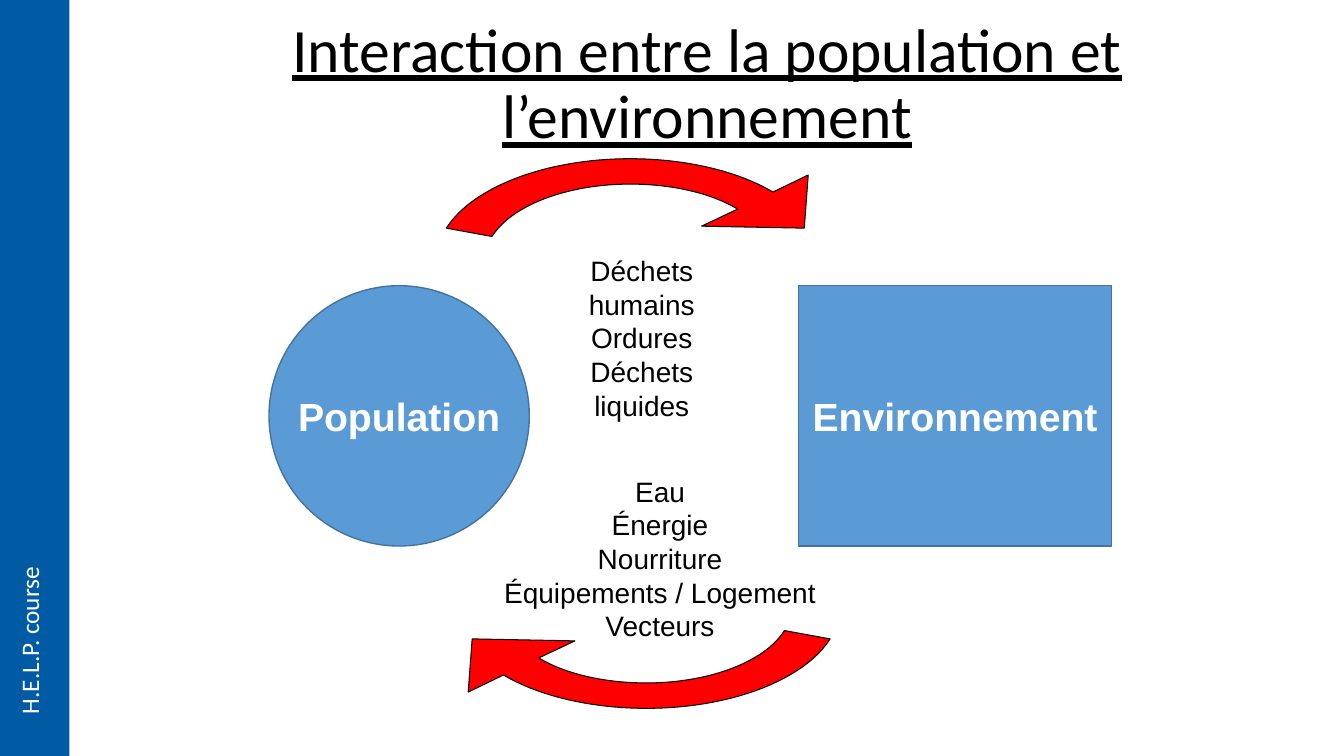
from lxml import etree
from pptx import Presentation, util as u
from pptx.dml.color import RGBColor
from pptx.enum import shapes as sh, text as tx
from pptx.oxml import ns

Cm, Pt = u.Cm, u.Pt
WIDE, HIGH = 33.87, 19.05
INK = {"bar": "005BA4", "node": "5B9BD5", "edge": "43739E",
       "arrow": "FF0000", "black": "000000", "white": "FFFFFF"}
# Arrow outline in cm within its box: one point is a line, three are a curve
START = (7.59, 1.27)
STEPS = [
    [(6.91, 0.86), (5.92, 0.64), (4.88, 0.64)],
    [(3.3, 0.64), (1.9, 1.17), (1.4, 1.96)],
    [(0.25, 1.75)],
    [(0.91, 0.71), (2.77, 0), (4.88, 0)],
    [(6.25, 0), (7.57, 0.3), (8.48, 0.84)],
    [(9.37, 0.41)], [(9.27, 1.75)], [(6.68, 1.7)], [START],
]


def tone(key):
    return RGBColor.from_string(INK[key])


def write(shape, lines, size=20, font="Arial", ink="black", bold=False,
          under=False, align="CENTER", anchor="TOP", wrap=True, space=1.0,
          side=0.25):
    frame = shape.text_frame
    frame.word_wrap = wrap
    frame.auto_size = tx.MSO_AUTO_SIZE.NONE
    frame.vertical_anchor = tx.MSO_ANCHOR[anchor]
    frame.margin_left = frame.margin_right = Cm(side)
    frame.margin_top = frame.margin_bottom = Cm(0.13)
    for i, line in enumerate(lines):
        para = frame.paragraphs[0] if i == 0 else frame.add_paragraph()
        para.alignment = tx.PP_ALIGN[align]
        para.line_spacing = space
        run = para.add_run()
        run.text = line
        run.font.size, run.font.name = Pt(size), font
        run.font.bold, run.font.underline = bold, under
        run.font.color.rgb = tone(ink)


def paint(shape, fill, edge=None, width=1):
    shape.shadow.inherit = False
    shape.fill.solid()
    shape.fill.fore_color.rgb = tone(fill)
    if edge:
        shape.line.color.rgb = tone(edge)
        shape.line.width = Pt(width)
    else:
        shape.line.fill.background()


def side_bar(slide, box):
    x, y, w, h = box
    bar = slide.shapes.add_shape(sh.MSO_SHAPE.RECTANGLE, *map(Cm, box))
    paint(bar, "bar")
    label = slide.shapes.add_textbox(
        Cm(x + 0.1), Cm(y + h - 4.93), Cm(w - 0.48), Cm(4.01))
    write(label, ["H.E.L.P. course"], size=18, font="Calibri", ink="white",
          align="LEFT", wrap=False)
    label.text_frame._txBody.bodyPr.set("vert", "vert270")


def heading(slide, box):
    title = slide.shapes.title
    title.left, title.top, title.width, title.height = map(Cm, box)
    write(title, ["Interaction entre la population et l’environnement"],
          size=44, font="Calibri", under=True, anchor="MIDDLE", space=0.9,
          side=0.4)


def node(slide, box, kind, name):
    shape = slide.shapes.add_shape(kind, *map(Cm, box))
    paint(shape, "node", "edge")
    write(shape, [name], size=28, ink="white", bold=True, anchor="MIDDLE",
          wrap=False)


def flow(slide, box, lines):
    write(slide.shapes.add_textbox(*map(Cm, box)), lines)


def arrow(slide, box, turned=False):
    x, y, w, h = map(Cm, box)
    form = slide.shapes.build_freeform(x, y)
    form.add_line_segments([(x + w, y), (x + w, y + h), (x, y + h)])
    shape = form.convert_to_shape()
    paint(shape, "arrow", "black", 0.75)
    # Trace the curved outline inside the frame
    trace = shape._element.xpath(".//a:path")[0]
    for part in list(trace):
        trace.remove(part)

    def draw(tag, dots=()):
        part = etree.SubElement(trace, ns.qn(tag))
        for a, b in dots:
            a, b = Cm(a), Cm(b)
            if turned:
                a, b = w - a, h - b
            etree.SubElement(part, ns.qn("a:pt"), x=str(a), y=str(b))

    draw("a:moveTo", [START])
    for step in STEPS:
        draw("a:lnTo" if len(step) == 1 else "a:cubicBezTo", step)
    draw("a:close")


def cycle(slide, box):
    x, y, w, h = box
    size = (9.73, 5.08)
    flow(slide, (x + 5.65, y + 4.62, 8.41, 4.55),
         ["Eau", "Énergie", "Nourriture", "Équipements / Logement",
          "Vecteurs"])
    arrow(slide, (x + 4.66, y + 5.57, *size), turned=True)
    node(slide, (x, y, h, h), sh.MSO_SHAPE.OVAL, "Population")
    node(slide, (x + w - 7.9, y, 7.9, h), sh.MSO_SHAPE.RECTANGLE,
         "Environnement")
    flow(slide, (x + 6.97, y - 0.94, 4.85, 2.82),
         ["Déchets humains", "Ordures", "Déchets liquides"])
    arrow(slide, (x + 4.22, y - 3.2, *size))


def main():
    deck = Presentation()
    deck.slide_width, deck.slide_height = Cm(WIDE), Cm(HIGH)
    slide = deck.slides.add_slide(deck.slide_layouts[5])
    side_bar(slide, (0, 0, 1.75, HIGH))
    heading(slide, (1.77, 1.01, 32.11, 2.29))
    cycle(slide, (6.78, 7.2, 21.24, 6.56))
    deck.save("out.pptx")


if __name__ == "__main__":
    main()
